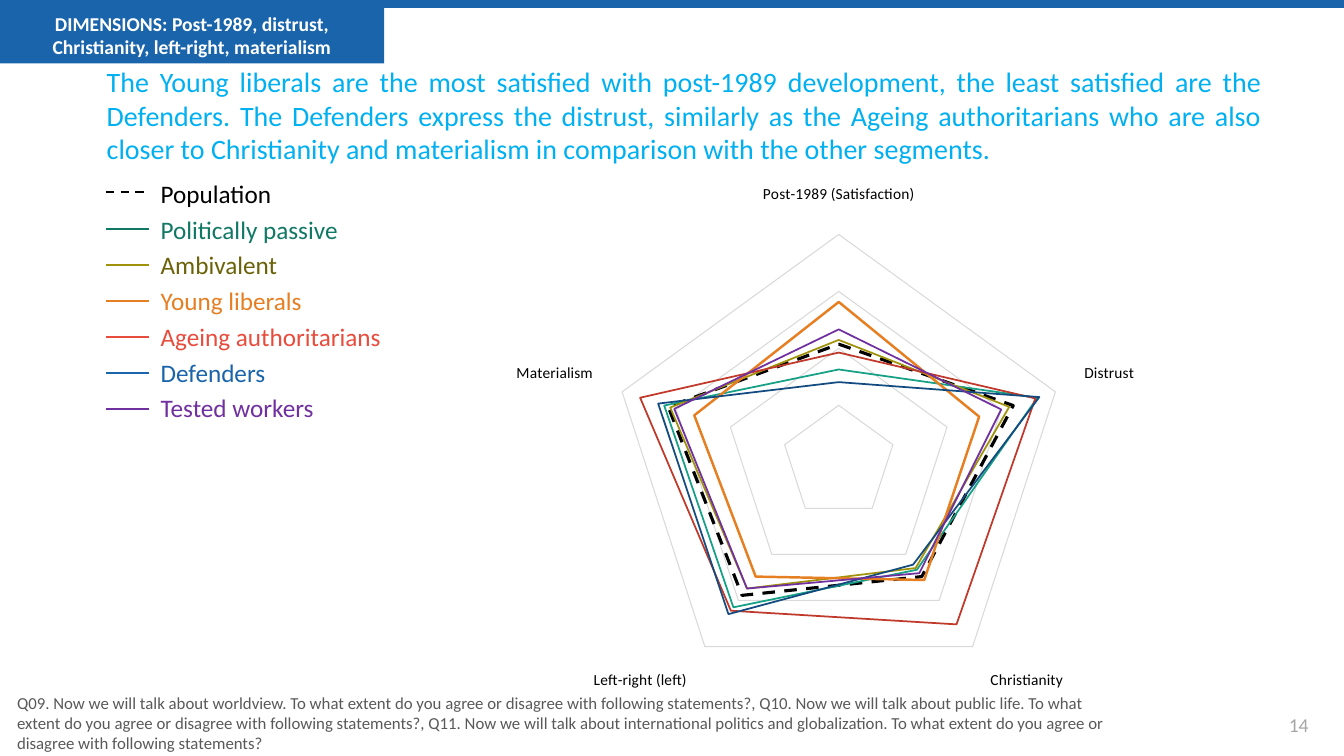
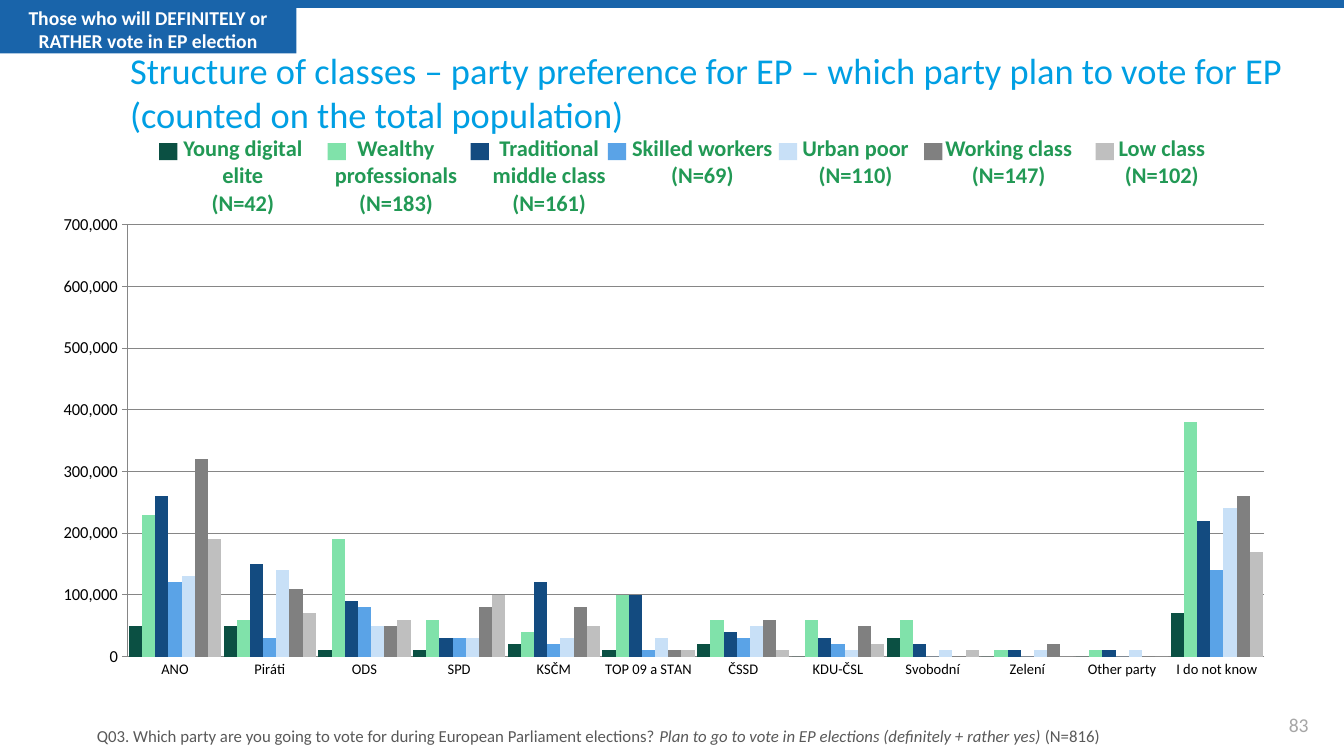
from lxml import etree
from pptx import Presentation, util as u
from pptx.chart.data import CategoryChartData
from pptx.dml.color import RGBColor
from pptx.enum import chart as ch, dml, shapes, text
from pptx.oxml.ns import qn

FONT = "Calibri"
BLUE = "1964AA"
WHITE = "FFFFFF"
BLACK = "000000"
GRAY = "595959"
PALE = "A6A6A6"
GREEN = "229955"
LEFT = text.PP_ALIGN.LEFT
MID = text.PP_ALIGN.CENTER
FULL = text.PP_ALIGN.JUSTIFY
TOP = text.MSO_ANCHOR.TOP
HALF = text.MSO_ANCHOR.MIDDLE

GROUPS = [
    ("Population", BLACK, BLACK, BLACK, 2.25, [56, 87, 67, 78, 85]),
    ("Politically passive", "107864", "107864", "16A085", 1.25, [44, 99, 63, 85, 87]),
    ("Ambivalent", "6B6208", "A0930B", "A0930B", 1.25, [58, 85, 62, 74, 84]),
    ("Young liberals", "E67E22", "E67E22", "E67E22", 1.75, [76, 70, 69, 67, 72]),
    ("Ageing authoritarians", "E74C3C", "E74C3C", "C0392B", 1.25, [52, 98, 95, 87, 99]),
    ("Defenders", BLUE, BLUE, "134B80", 1.25, [38, 100, 60, 89, 90]),
    ("Tested workers", "7030A0", "7030A0", "7030A0", 1.25, [63, 81, 65, 74, 82]),
]
THEMES = ["Post-1989 (Satisfaction)", "Distrust", "Christianity",
          "Left-right (left)", "Materialism"]

CLASSES = [
    ("Young digital elite\n(N=42)", "0B5043", 4.01, [5, 5, 1, 1, 2, 1, 2, 0, 3, 0, 0, 7]),
    ("Wealthy professionals (N=183)", "80E2AA", 8.26,
     [23, 6, 19, 6, 4, 10, 6, 6, 6, 1, 1, 38]),
    ("Traditional middle class (N=161)", "134B80", 11.86,
     [26, 15, 9, 3, 12, 10, 4, 3, 2, 1, 1, 22]),
    ("Skilled workers (N=69)", "5AA3E7", 15.32, [12, 3, 8, 3, 2, 1, 3, 2, 0, 0, 0, 14]),
    ("Urban poor (N=110)", "C8E0F7", 19.63, [13, 14, 5, 3, 3, 3, 5, 1, 1, 1, 1, 24]),
    ("Working class (N=147)", "808080", 23.29, [32, 11, 5, 8, 8, 1, 6, 5, 0, 2, 0, 26]),
    ("Low class (N=102)", "BFBFBF", 27.61, [19, 7, 6, 10, 5, 1, 1, 2, 1, 0, 0, 17]),
]
PARTIES = ["ANO", "Piráti", "ODS", "SPD", "KSČM", "TOP 09 a STAN", "ČSSD",
           "KDU-ČSL", "Svobodní", "Zelení", "Other party", "I do not know"]


def color(code):
    return RGBColor.from_string(code)


def place(box):
    return [u.Cm(v) for v in box]


def style(font, size, code, bold=False, italic=False):
    font.name = FONT
    font.size = u.Pt(size)
    font.bold = bold
    font.italic = italic
    font.color.rgb = color(code)


def write(frame, runs, size, code, align=LEFT, bold=False):
    para = frame.paragraphs[0]
    para.alignment = align
    for words, italic in runs:
        for i, line in enumerate(words.split("\n")):
            if i:
                para.add_line_break()
            run = para.add_run()
            run.text = line
            style(run.font, size, code, bold, italic)


def label(slide, box, runs, size, code, align=LEFT, anchor=TOP, inset=None):
    frame = slide.shapes.add_textbox(*place(box)).text_frame
    frame.word_wrap = True
    frame.vertical_anchor = anchor
    if inset is not None:
        frame.margin_left = u.Cm(inset)
        frame.margin_right = frame.margin_top = frame.margin_bottom = 0
    write(frame, runs, size, code, align)


def block(slide, box, fill):
    shape = slide.shapes.add_shape(shapes.MSO_SHAPE.RECTANGLE, *place(box))
    shape.shadow.inherit = False
    shape.fill.solid()
    shape.fill.fore_color.rgb = color(fill)
    shape.line.fill.background()
    return shape


def rule(slide, x, y, width, code, dash):
    line = slide.shapes.add_connector(
        shapes.MSO_CONNECTOR.STRAIGHT, *place((x, y, x + width, y)))
    line.line.color.rgb = color(code)
    line.line.width = u.Pt(1.5)
    if dash:
        line.line.dash_style = dml.MSO_LINE.DASH
    etree.SubElement(line.element.spPr, qn("a:effectLst"))


def banner(slide, box, words):
    frame = block(slide, box, BLUE).text_frame
    frame.word_wrap = True
    frame.vertical_anchor = HALF
    write(frame, [(words, False)], 14, WHITE, MID, True)


def start(deck, number):
    slide = deck.slides.add_slide(deck.slide_layouts[6])
    block(slide, (0, 0, 33.87, 0.2), BLUE)
    label(slide, (31.6, 17.75, 2.26, 1.02), [(number, False)], 14, PALE, MID, HALF)
    return slide


def footer(slide, box, runs):
    label(slide, box, runs, 12, GRAY, anchor=HALF, inset=0)


def layout(chart, plot):
    area = chart.element.find(".//" + qn("c:plotArea"))
    for old in area.findall(qn("c:layout")):
        area.remove(old)
    outer = etree.Element(qn("c:layout"))
    inner = etree.SubElement(outer, qn("c:manualLayout"))
    tags = ["layoutTarget", "xMode", "yMode", "x", "y", "w", "h"]
    for tag, val in zip(tags, ["inner", "edge", "edge", *plot]):
        etree.SubElement(inner, qn("c:" + tag)).set("val", str(val))
    area.insert(0, outer)


def graph(slide, kind, box, plot, names, rows, size, top, step, form):
    data = CategoryChartData()
    data.categories = names
    for i, row in enumerate(rows, 1):
        data.add_series(f"Series {i}", row)
    chart = slide.shapes.add_chart(kind, *place(box), data).chart
    chart.has_legend = chart.has_title = False
    style(chart.font, size, BLACK)
    layout(chart, plot)
    chart.plots[0].vary_by_categories = False
    axis = chart.value_axis
    axis.minimum_scale, axis.maximum_scale, axis.major_unit = 0, top, step
    axis.has_major_gridlines = True
    axis.tick_labels.number_format = form
    axis.tick_labels.number_format_is_linked = False
    chart.category_axis.has_major_gridlines = False
    chart.category_axis.format.line.fill.background()
    return chart


def radar(slide):
    chart = graph(slide, ch.XL_CHART_TYPE.RADAR, (10.74, 4.14, 20.45, 14.99),
                  (0.172, 0.118, 0.673, 0.766), THEMES,
                  [group[-1] for group in GROUPS], 10.5, 108, 27, "0.00")
    axis = chart.value_axis
    axis.visible = False
    grid = axis.major_gridlines.format.line
    grid.color.rgb = color("D9D9D9")
    grid.width = u.Pt(0.75)
    style(chart.category_axis.tick_labels.font, 11, BLACK)
    for i, (item, group) in enumerate(zip(chart.plots[0].series, GROUPS)):
        item.smooth = False
        item.marker.style = ch.XL_MARKER_STYLE.NONE
        line = item.format.line
        line.color.rgb = color(group[3])
        line.width = u.Pt(group[4])
        if i == 0:
            line.dash_style = dml.MSO_LINE.DASH


def bars(slide):
    rows = [[10000 * val for val in item[-1]] for item in CLASSES]
    chart = graph(slide, ch.XL_CHART_TYPE.COLUMN_CLUSTERED,
                  (1.6, 4.88, 30.38, 12.6), (0.038, 0.062, 0.958, 0.864),
                  PARTIES, rows, 12, 700000, 100000, "#,##0")
    plot = chart.plots[0]
    plot.gap_width, plot.overlap = 20, 0
    axis = chart.value_axis
    axis.major_tick_mark = ch.XL_TICK_MARK.OUTSIDE
    for line in (axis.format.line, axis.major_gridlines.format.line):
        line.color.rgb = color("868686")
        line.width = u.Pt(0.75)
    chart.category_axis.major_tick_mark = ch.XL_TICK_MARK.NONE
    style(chart.category_axis.tick_labels.font, 10.5, BLACK)
    for item, group in zip(plot.series, CLASSES):
        item.format.fill.solid()
        item.format.fill.fore_color.rgb = color(group[1])
        item.invert_if_negative = False


def heads(slide):
    wide = 3.86
    box = (4.19, 3.4, wide * len(CLASSES), 1.63)
    table = slide.shapes.add_table(1, len(CLASSES), *place(box)).table
    table.horz_banding = False
    for i, group in enumerate(CLASSES):
        table.columns[i].width = u.Cm(wide)
        cell = table.cell(0, i)
        cell.fill.solid()
        cell.fill.fore_color.rgb = color(WHITE)
        cell.vertical_anchor = TOP
        cell.margin_left = cell.margin_right = 0
        cell.margin_top = cell.margin_bottom = 0
        write(cell.text_frame, [(group[0], False)], 16, GREEN, MID, True)


def themes(deck):
    slide = start(deck, "14")
    radar(slide)
    label(slide, (0.2, 1.63, 31.6, 1.8), [(
        "The Young liberals are the most satisfied with post-1989 development, "
        "the least satisfied are the Defenders. The Defenders express the distrust, "
        "similarly as the Ageing authoritarians who are also closer to Christianity "
        "and materialism in comparison with the other segments.", False)],
        20, "00B0F0", FULL, inset=2.49)
    for i, (name, ink, line, *_) in enumerate(GROUPS):
        label(slide, (3.8, 4.37 + 0.9 * i, 8, 1.02), [(name, False)], 18, ink)
        rule(slide, 2.67, 4.85 + 0.91 * i, 1.09, line, i == 0)
    banner(slide, (0, 0.18, 9.68, 1.42),
           "DIMENSIONS: Post-1989, distrust, Christianity, left-right, materialism")
    footer(slide, (0.43, 17.37, 27.91, 1.7), [(
        "Q09. Now we will talk about worldview. To what extent do you agree or "
        "disagree with following statements?, Q10. Now we will talk about public "
        "life. To what extent do you agree or disagree with following statements?, "
        "Q11. Now we will talk about international politics and globalization. To "
        "what extent do you agree or disagree with following statements?", False)])


def votes(deck):
    slide = start(deck, "83")
    heads(slide)
    bars(slide)
    footer(slide, (2.44, 18.03, 25.55, 1.02), [
        ("Q03. Which party are you going to vote for during European Parliament "
         "elections? ", False),
        ("Plan to go to vote in EP elections (definitely + rather yes) ", True),
        ("(N=816)", False)])
    for group in CLASSES:
        block(slide, (group[2], 3.61, 0.46, 0.43), group[1])
    label(slide, (0.79, 1.47, 33.08, 1.7), [(
        "Structure of classes – party preference for EP – which party plan to vote "
        "for EP\n(counted on the total population)", False)],
        26, "009FE3", anchor=HALF, inset=2.49)
    banner(slide, (0, 0.13, 7.47, 1.22),
           "Those who will DEFINITELY or RATHER vote in EP election")


def main():
    deck = Presentation()
    deck.slide_width, deck.slide_height = u.Cm(33.87), u.Cm(19.05)
    themes(deck)
    votes(deck)
    deck.save("out.pptx")


if __name__ == "__main__":
    main()
